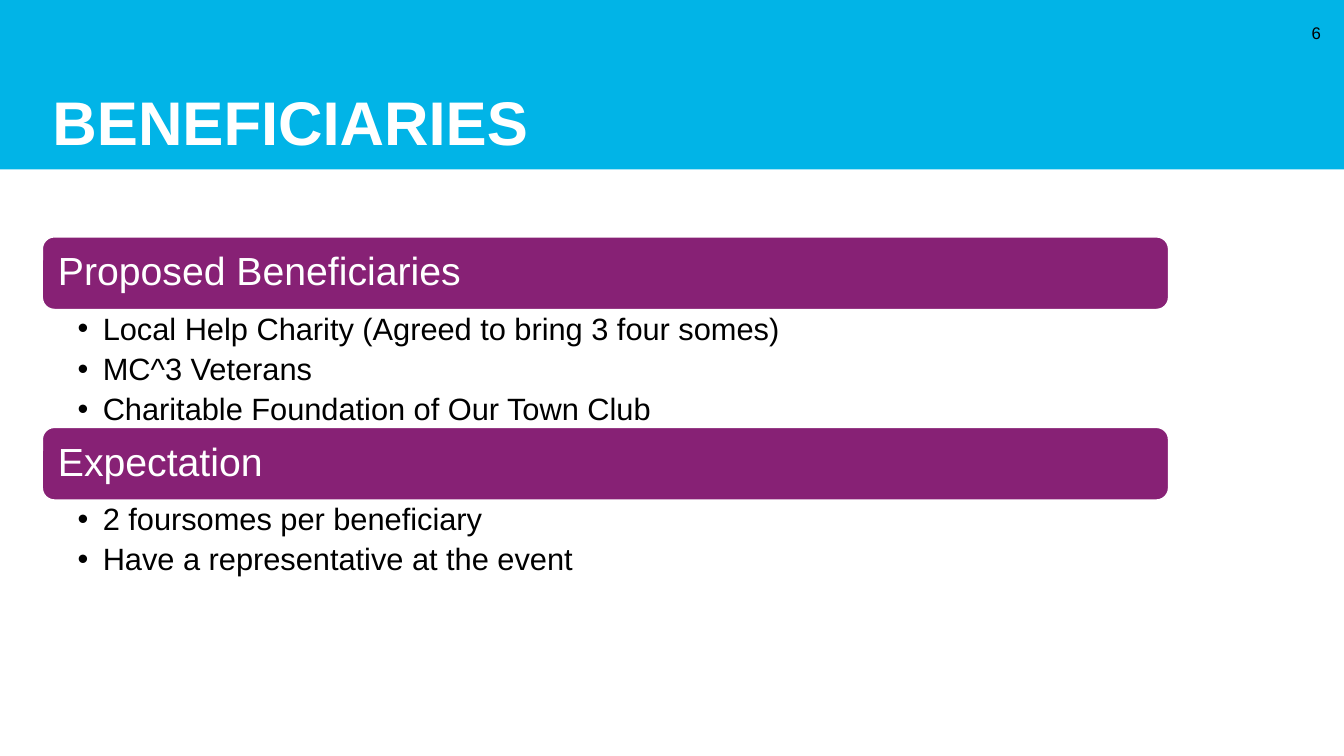
from lxml import etree
from pptx import Presentation
from pptx.dml.color import RGBColor
from pptx.enum.shapes import MSO_SHAPE
from pptx.enum.text import MSO_ANCHOR, MSO_AUTO_SIZE, PP_ALIGN
from pptx.oxml.ns import qn
from pptx.util import Inches, Pt

RECT, ROUND = MSO_SHAPE.RECTANGLE, MSO_SHAPE.ROUNDED_RECTANGLE
TOP, MIDDLE, BOTTOM = MSO_ANCHOR.TOP, MSO_ANCHOR.MIDDLE, MSO_ANCHOR.BOTTOM
LEFT, RIGHT = PP_ALIGN.LEFT, PP_ALIGN.RIGHT
NO_FIT = MSO_AUTO_SIZE.NONE

TITLE = "BENEFICIARIES"
NUMBER = "6"
GROUPS = [
    ("Proposed Beneficiaries", [
        "Local Help Charity (Agreed to bring 3 four somes)",
        "MC^3 Veterans",
        "Charitable Foundation of Our Town Club",
    ]),
    ("Expectation", [
        "2 foursomes per beneficiary",
        "Have a representative at the event",
    ]),
]
COLORS = {"band": "01B4E7", "bar": "872175", "white": "FFFFFF", "black": "000000"}
FONT = "Arial"
WIDE, HIGH = 13.33, 7.5
BAND = 1.68
EDGE, SPAN = 0.42, 11.17
START, BAR, ROW = 2.35, 0.72, 0.39


def color(name):
    return RGBColor.from_string(COLORS[name])


def block(slide, kind, at, fill):
    shape = slide.shapes.add_shape(kind, *map(Inches, at))
    shape.shadow.inherit = False
    shape.fill.solid()
    shape.fill.fore_color.rgb = color(fill)
    shape.line.fill.background()
    return shape


def bullet(para):
    """Give the paragraph a hanging round bullet."""
    props = para._p.get_or_add_pPr()
    props.set("marL", str(Inches(0.25)))
    props.set("indent", str(-Inches(0.25)))
    etree.SubElement(props, qn("a:buFont"), typeface=FONT)
    etree.SubElement(props, qn("a:buChar"), char="•")


def write(shape, lines, size, tint, anchor, inset, align=LEFT,
          bold=False, space=0.9, dots=False):
    frame = shape.text_frame
    frame.word_wrap = True
    frame.auto_size = NO_FIT
    frame.vertical_anchor = anchor
    (frame.margin_left, frame.margin_top,
     frame.margin_right, frame.margin_bottom) = map(Inches, inset)
    for i, line in enumerate(lines):
        para = frame.add_paragraph() if i else frame.paragraphs[0]
        if dots:
            bullet(para)
            para.space_after = Pt(5)
        para.alignment = align
        para.line_spacing = space
        run = para.add_run()
        run.text = line
        run.font.name = FONT
        run.font.size = Pt(size)
        run.font.bold = bold
        run.font.color.rgb = color(tint)


def main():
    deck = Presentation()
    deck.slide_width, deck.slide_height = Inches(WIDE), Inches(HIGH)
    slide = deck.slides.add_slide(deck.slide_layouts[5])
    shapes = slide.shapes

    band = block(slide, RECT, (0, 0, WIDE, BAND), "band")
    title = shapes.title
    title._element.addprevious(band._element)
    title.left, title.top = Inches(EDGE), Inches(0)
    title.width, title.height = Inches(12.58), Inches(BAND)
    write(title, [TITLE], 44, "white", BOTTOM, (0.1, 0, 0.1, 0.1), bold=True)

    top = START
    for head, items in GROUPS:
        bar = block(slide, ROUND, (EDGE, top, SPAN, BAR), "bar")
        bar.line.color.rgb = color("white")
        bar.line.width = Pt(1)
        write(bar, [head], 28, "white", MIDDLE, (0.12,) * 4)
        top += BAR
        tall = ROW * len(items)
        box = shapes.add_textbox(*map(Inches, (EDGE, top, SPAN, tall)))
        write(box, items, 22, "black", TOP, (0.35, 0.04, 0.22, 0.04), dots=True)
        top += tall

    page = shapes.add_textbox(*map(Inches, (12.74, 0.13, 0.46, 0.4)))
    write(page, [NUMBER], 12, "black", MIDDLE, (0.1, 0.05, 0.1, 0.05),
          align=RIGHT, space=1.0)
    deck.save("out.pptx")


if __name__ == "__main__":
    main()
